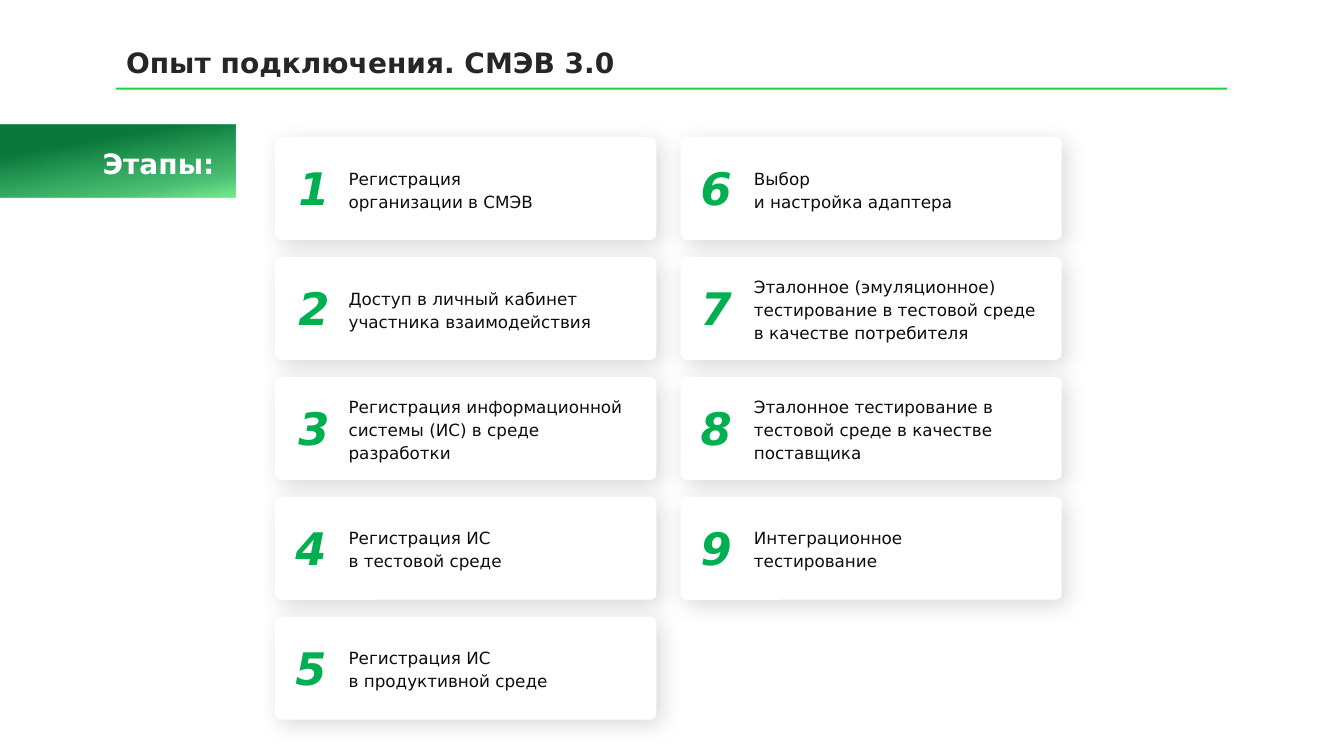
from copy import deepcopy
from dataclasses import dataclass

from lxml.etree import SubElement
from pptx import Presentation
from pptx.dml.color import RGBColor
from pptx.enum.shapes import MSO_SHAPE
from pptx.enum.text import MSO_ANCHOR, MSO_AUTO_SIZE
from pptx.oxml.ns import qn
from pptx.util import Inches, Pt


@dataclass(frozen=True)
class Theme:
    font: str = "DejaVu Sans"
    heading: str = "262626"
    body: str = "0D0D0D"
    number: str = "00B050"
    rule: str = "1CD247"
    white: str = "FFFFFF"
    shadow: str = "000000"
    banner: tuple = ((29, "007234", 95), (81, "0DAB43", 73), (100, "1EDE4B", 60))
    heading_size: int = 20
    number_size: int = 32
    body_size: int = 12


@dataclass(frozen=True)
class Grid:
    left: float = 2.73
    top: float = 1.36
    column_step: float = 4.02
    row_step: float = 1.19
    card_width: float = 3.78
    card_height: float = 1.02
    rows: int = 5

    def cell(self, index):
        column, row = divmod(index, self.rows)
        return self.left + column * self.column_step, self.top + row * self.row_step


THEME = Theme()
GRID = Grid()
STAGES = (
    "Регистрация\nорганизации в СМЭВ",
    "Доступ в личный кабинет участника взаимодействия",
    "Регистрация информационной системы (ИС) в среде разработки",
    "Регистрация ИС\nв тестовой среде",
    "Регистрация ИС\nв продуктивной среде",
    "Выбор\nи настройка адаптера",
    "Эталонное (эмуляционное) тестирование в тестовой среде\nв качестве потребителя",
    "Эталонное тестирование в тестовой среде в качестве поставщика",
    "Интеграционное\nтестирование",
)


def write(frame, text, size, color, bold=False, italic=False, spacing=1.0,
          anchor=MSO_ANCHOR.TOP, wrap=True, fit=MSO_AUTO_SIZE.NONE):
    frame.word_wrap = wrap
    frame.auto_size = fit
    frame.vertical_anchor = anchor
    paragraph = frame.paragraphs[0]
    paragraph.text = text
    paragraph.line_spacing = spacing
    for run in paragraph.runs:
        run.font.name = THEME.font
        run.font.size = Pt(size)
        run.font.bold = bold
        run.font.italic = italic
        run.font.color.rgb = RGBColor.from_string(color)
    style = paragraph.runs[0]._r.get_or_add_rPr()
    for line_break in paragraph._p.findall(qn("a:br")):
        line_break.append(deepcopy(style))


def add_label(slide, box, text, **style):
    label = slide.shapes.add_textbox(*map(Inches, box))
    write(label.text_frame, text, fit=MSO_AUTO_SIZE.SHAPE_TO_FIT_TEXT, **style)


def add_panel(slide, box, color, kind=MSO_SHAPE.RECTANGLE):
    panel = slide.shapes.add_shape(kind, *map(Inches, box))
    panel.shadow.inherit = False
    panel.line.fill.background()
    panel.fill.solid()
    panel.fill.fore_color.rgb = RGBColor.from_string(color)
    return panel


def add_tint(parent, color, opacity):
    tint = SubElement(parent, qn("a:srgbClr"), val=color)
    SubElement(tint, qn("a:alpha"), val=str(opacity * 1000))


def shade(panel, stops, angle):
    panel.fill.gradient()
    panel.fill.gradient_angle = angle
    stop_list = panel._element.spPr.find(qn("a:gradFill")).find(qn("a:gsLst"))
    for stop in list(stop_list):
        stop_list.remove(stop)
    for position, color, opacity in stops:
        stop = SubElement(stop_list, qn("a:gs"), pos=str(position * 1000))
        add_tint(stop, color, opacity)


def cast_shadow(panel):
    effects = panel._element.spPr.find(qn("a:effectLst"))
    shadow = SubElement(effects, qn("a:outerShdw"), blurRad=str(Pt(16)),
                        dist=str(Pt(5)), dir=str(45 * 60000), algn="tl", rotWithShape="0")
    add_tint(shadow, THEME.shadow, 15)


def add_title(slide, text):
    title = slide.shapes.title
    title.left, title.top, title.width, title.height = map(Inches, (1.15, 0.43, 11.02, 0.41))
    write(title.text_frame, text, THEME.heading_size, THEME.heading,
          bold=True, spacing=0.9, anchor=MSO_ANCHOR.BOTTOM)
    title.text_frame.paragraphs[0].alignment = 1
    add_panel(slide, (1.15, 0.87, 11.02, 0.02), THEME.rule)


def add_banner(slide, text):
    banner = add_panel(slide, (0, 1.24, 2.34, 0.72), THEME.white)
    shade(banner, THEME.banner, 280)
    add_label(slide, (0.92, 1.36, 1.42, 0.45), text, size=THEME.heading_size,
              color=THEME.white, bold=True, spacing=1.14)


def add_stage(slide, index, text):
    left, top = GRID.cell(index)
    card = add_panel(slide, (left, top, GRID.card_width, GRID.card_height),
                     THEME.white, MSO_SHAPE.ROUNDED_RECTANGLE)
    card.adjustments[0] = 0.06
    cast_shadow(card)
    frame = card.text_frame
    frame.margin_left, frame.margin_right = Inches(0.71), Inches(0.08)
    frame.margin_top = frame.margin_bottom = Inches(0.04)
    write(frame, text, THEME.body_size, THEME.body, spacing=1.14, anchor=MSO_ANCHOR.MIDDLE)
    frame.paragraphs[0].alignment = 1
    indent = 0.13 if index < 3 else 0.1
    add_label(slide, (left + indent, top + 0.19, 0.52, 0.64), str(index + 1),
              size=THEME.number_size, color=THEME.number, bold=True, italic=True, wrap=False)


def main():
    deck = Presentation()
    deck.slide_width, deck.slide_height = Inches(13.33), Inches(7.5)
    slide = deck.slides.add_slide(deck.slide_layouts[5])
    add_title(slide, "Опыт подключения. СМЭВ 3.0")
    add_banner(slide, "Этапы:")
    for index, text in enumerate(STAGES):
        add_stage(slide, index, text)
    deck.save("out.pptx")


if __name__ == "__main__":
    main()
